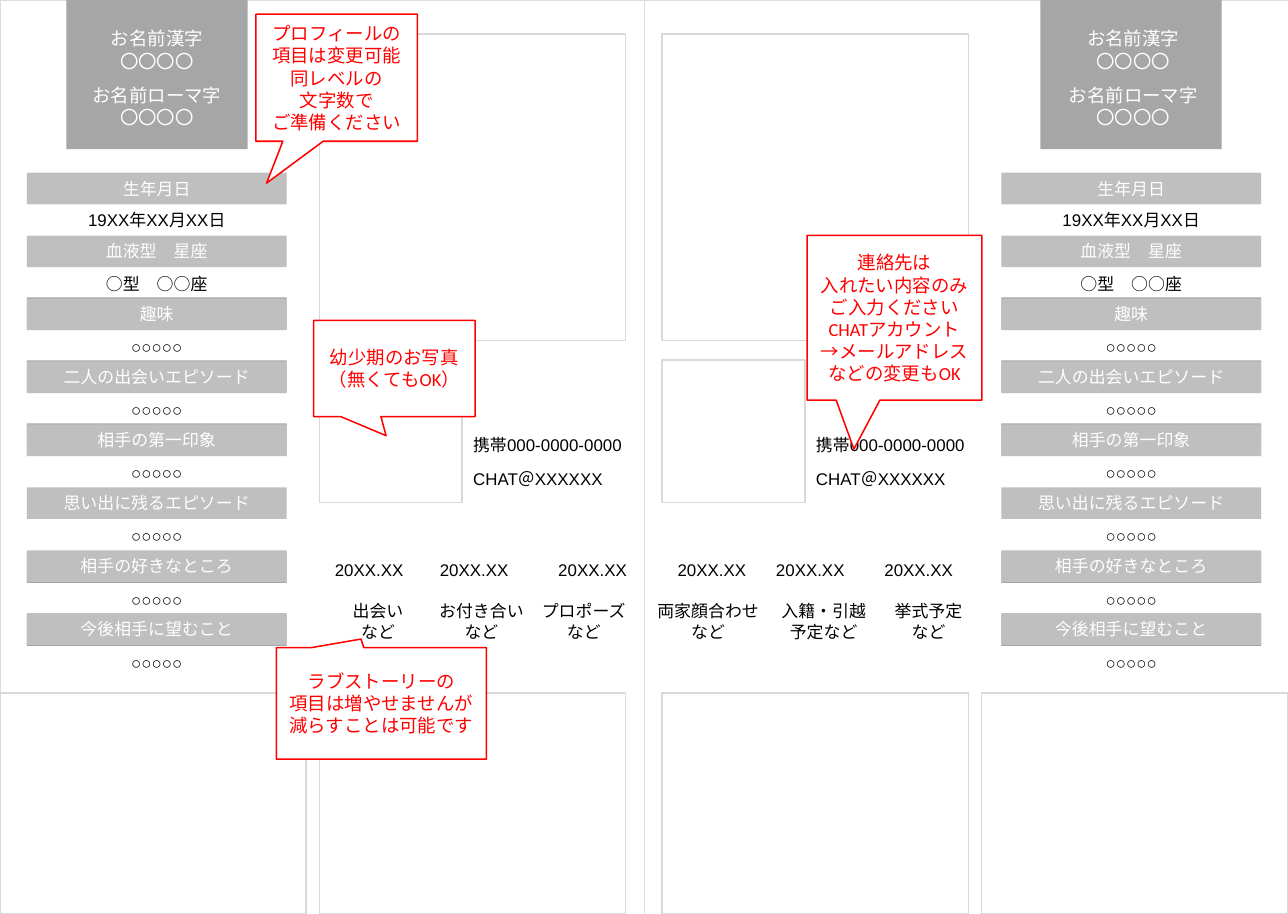
"""Build the two-page couple profile sheet with its guidance callouts."""
import pptx
import pptx.dml.color
import pptx.enum.shapes
import pptx.enum.text
import pptx.util

Pt = pptx.util.Pt
Shape = pptx.enum.shapes.MSO_SHAPE
Align = pptx.enum.text.PP_ALIGN
Anchor = pptx.enum.text.MSO_ANCHOR
AutoSize = pptx.enum.text.MSO_AUTO_SIZE
RGBColor = pptx.dml.color.RGBColor

WHITE = RGBColor(0xFF, 0xFF, 0xFF)
BLACK = RGBColor(0x00, 0x00, 0x00)
RED = RGBColor(0xFF, 0x00, 0x00)
DARK_GRAY = RGBColor(0xA6, 0xA6, 0xA6)
MID_GRAY = RGBColor(0xBF, 0xBF, 0xBF)
FRAME_GRAY = RGBColor(0xD9, 0xD9, 0xD9)
PAGE_GRAY = RGBColor(0xDD, 0xDD, 0xDD)

WIDTH, HEIGHT = 838.8, 595.44
ROW_WIDTH, ROW_HEIGHT = 169.2, 20.6
HEADING_TOP, HEADING_PITCH = 112.5, 41
ANSWER_TOP, ANSWER_PITCH = 133.2, 41.2
PHOTO, SMALL_PHOTO, BOTTOM_TOP = 199.5, 93, 451.4

BLANK_ANSWER = "○○○○○"
PROFILE = [
    ("生年月日", "19XX年XX月XX日", None),
    ("血液型　星座", "○型　○○座", None),
    ("趣味", BLANK_ANSWER, -0.7),
    ("二人の出会いエピソード", BLANK_ANSWER, -0.7),
    ("相手の第一印象", BLANK_ANSWER, -0.7),
    ("思い出に残るエピソード", BLANK_ANSWER, None),
    ("相手の好きなところ", BLANK_ANSWER, 0.7),
    ("今後相手に望むこと", BLANK_ANSWER, 0.7),
]
LOVE_STORY = [
    (209.5, 208.8, 74.9, ["出会い", "など"]),
    (277.9, 277.2, 72.7, ["お付き合い", "など"]),
    (355, 344.2, 72, ["プロポーズ", "など"]),
    (432.7, 419.8, 82.8, ["両家顔合わせ", "など"]),
    (496.8, 499, 74.9, ["入籍・引越予定など"]),
    (567.4, 573.8, 61.9, ["挙式予定", "など"]),
]
CALLOUTS = [
    (525.6, 153.4, 113.8, 107.3, (-0.232, 0.797),
     ["連絡先は", "入れたい内容のみ", "ご入力ください", "CHATアカウント",
      "→メールアドレスなどの変更もOK"]),
    (166.7, 9.2, 105.1, 82.8, (-0.434, 0.83),
     ["プロフィールの", "項目は変更可能", "同レベルの", "文字数で", "ご準備ください"]),
    (204.3, 208.8, 105.1, 62.6, (-0.051, 0.699),
     ["幼少期のお写真", "（無くてもOK）"]),
    (180, 421.9, 136.8, 72.7, (-0.097, -0.577),
     ["ラブストーリーの", "項目は増やせませんが減らすことは可能です"]),
]


class ProfileSheet:
    """Draw the elements of the profile sheet on one slide."""

    def __init__(self, slide):
        self.slide = slide
        self.font_name = "Arial"
        self.callout_font = "Calibri"
        self.text_size = 11
        self.large_size = 12

    def fill_text(self, shape, lines, color, size, font_name, alignment=Align.CENTER):
        text_frame = shape.text_frame
        text_frame.word_wrap = True
        text_frame.text = "\n".join(lines)
        for paragraph in text_frame.paragraphs:
            paragraph.alignment = alignment
            paragraph.font.name = font_name
            paragraph.font.size = Pt(size)
            paragraph.font.color.rgb = color
        return text_frame

    def block(self, left, top, width, height, fill=None, line=None,
              line_width=1, kind=Shape.RECTANGLE):
        shape = self.slide.shapes.add_shape(
            kind, Pt(left), Pt(top), Pt(width), Pt(height))
        shape.shadow.inherit = False
        if fill is None:
            shape.fill.background()
        else:
            shape.fill.solid()
            shape.fill.fore_color.rgb = fill
        if line is None:
            shape.line.fill.background()
        else:
            shape.line.color.rgb = line
            shape.line.width = Pt(line_width)
        return shape

    def frame(self, left, top, width, height):
        self.block(left, top, width, height, line=FRAME_GRAY)

    def label(self, left, top, width, height, lines, color=BLACK, size=None,
              alignment=Align.CENTER):
        box = self.slide.shapes.add_textbox(Pt(left), Pt(top), Pt(width), Pt(height))
        text_frame = self.fill_text(box, lines, color, size or self.text_size,
                                    self.font_name, alignment)
        text_frame.auto_size = AutoSize.SHAPE_TO_FIT_TEXT

    def heading(self, left, top, text):
        bar = self.block(left, top, ROW_WIDTH, ROW_HEIGHT, fill=MID_GRAY)
        text_frame = self.fill_text(bar, [text], WHITE, self.text_size, self.font_name)
        text_frame.vertical_anchor = Anchor.TOP
        text_frame.auto_size = AutoSize.SHAPE_TO_FIT_TEXT

    def name_plate(self, left, text_left):
        self.block(left, 0, 118.1, 97.2, fill=DARK_GRAY)
        for top, title in ((14.4, "お名前漢字"), (51.1, "お名前ローマ字")):
            self.label(text_left, top, 118.1, 36, [title, "〇〇〇〇"],
                       WHITE, self.large_size)

    def profile(self, left):
        for row, (title, answer, shade_offset) in enumerate(PROFILE):
            top = HEADING_TOP + row * HEADING_PITCH
            if shade_offset is not None:
                self.block(left, top + shade_offset, ROW_WIDTH, ROW_HEIGHT,
                           fill=DARK_GRAY)
            self.heading(left, top, title)
            self.label(left, ANSWER_TOP + row * ANSWER_PITCH, ROW_WIDTH,
                       ROW_HEIGHT, [answer])

    def photos_and_contact(self, left):
        self.frame(left, 22.3, PHOTO, PHOTO)
        self.frame(left, 234.5, SMALL_PHOTO, SMALL_PHOTO)
        for top, text in ((279.4, "携帯000-0000-0000"), (301.7, "CHAT＠XXXXXX")):
            self.label(left + SMALL_PHOTO, top, 126, ROW_HEIGHT, [text],
                       alignment=Align.LEFT)

    def callout(self, left, top, width, height, tip, lines):
        shape = self.block(left, top, width, height, WHITE, RED,
                           kind=Shape.RECTANGULAR_CALLOUT)
        shape.adjustments[0], shape.adjustments[1] = tip
        text_frame = self.fill_text(shape, lines, RED, self.large_size,
                                    self.callout_font)
        text_frame.vertical_anchor = Anchor.MIDDLE


def main():
    presentation = pptx.Presentation()
    presentation.slide_width = Pt(WIDTH)
    presentation.slide_height = Pt(HEIGHT)
    sheet = ProfileSheet(presentation.slides.add_slide(presentation.slide_layouts[6]))

    for page_left in (0, WIDTH / 2):
        sheet.block(page_left, 0, WIDTH / 2, HEIGHT, line=PAGE_GRAY, line_width=0.25)
    for plate_left, name_left, profile_left in ((43.2, 43.2, 17.5), (677.5, 679, 652.1)):
        sheet.name_plate(plate_left, name_left)
        sheet.profile(profile_left)
    for photo_left in (208, 431.3):
        sheet.photos_and_contact(photo_left)
    for bottom_left in (0, 208, 431.3, WIDTH - PHOTO):
        sheet.frame(bottom_left, BOTTOM_TOP, PHOTO, HEIGHT - BOTTOM_TOP)
    for date_left, event_left, event_width, event in LOVE_STORY:
        sheet.label(date_left, 360.7, 61.9, ROW_HEIGHT, ["20XX.XX"])
        sheet.label(event_left, 388.1, event_width, 33.8, event)
    for callout in CALLOUTS:
        sheet.callout(*callout)

    presentation.save("out.pptx")


if __name__ == "__main__":
    main()
